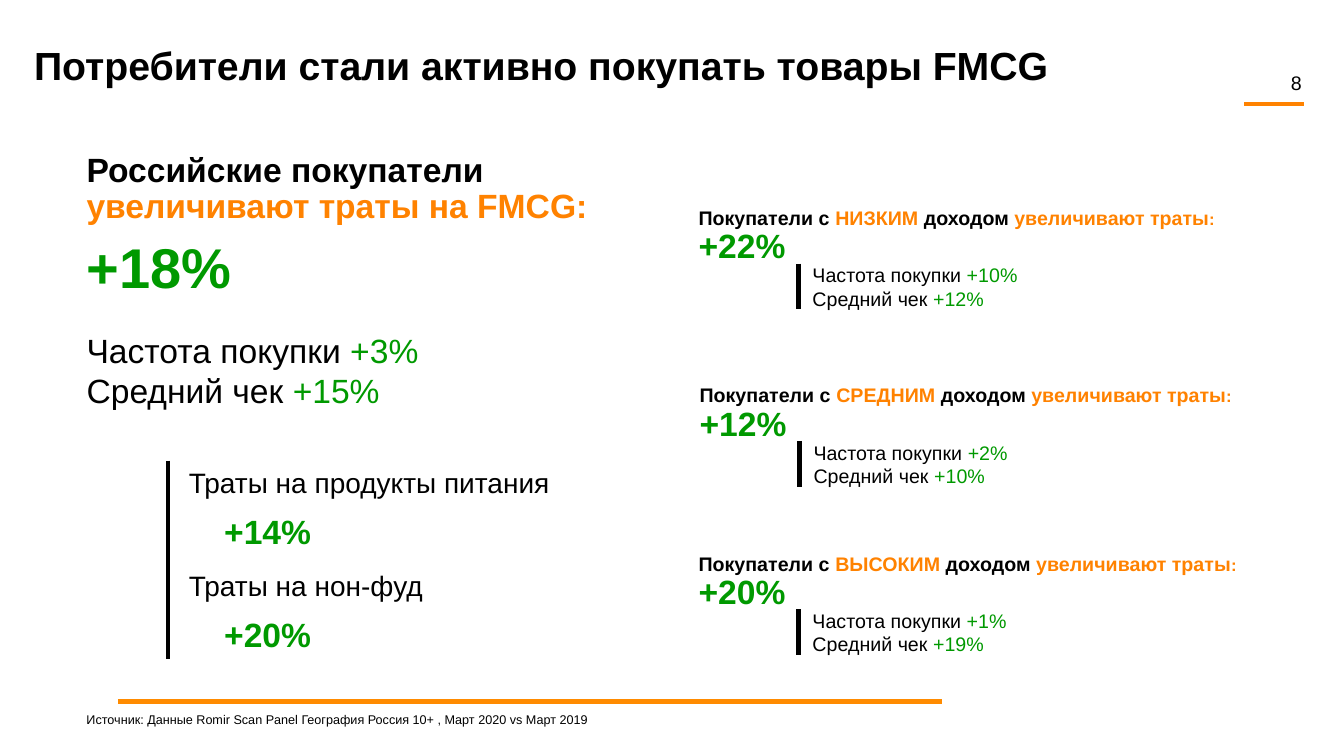
from dataclasses import dataclass

from lxml.etree import SubElement
from pptx import Presentation
from pptx.dml.color import RGBColor
from pptx.enum.shapes import MSO_CONNECTOR as Connector
from pptx.enum.text import MSO_ANCHOR as Anchor, PP_ALIGN as Align
from pptx.oxml.ns import qn
from pptx.util import Inches, Pt

WIDTH, HEIGHT = Inches(13.33), Inches(7.5)
COLUMN, ROW = WIDTH / 133.3, HEIGHT / 75


@dataclass(frozen=True)
class Theme:
    font: str = "Arial"
    black: str = "000000"
    orange: str = "FF8200"
    footer_orange: str = "FF8B00"
    green: str = "009900"
    line: float = 3
    title: float = 28
    hero: float = 40
    large: float = 24
    medium: float = 20
    small: float = 14
    colon: float = 12
    source: float = 9
    tight: float = 0.9
    gap: float = 10


THEME = Theme()


@dataclass(frozen=True)
class Box:
    left: float
    top: float
    width: float
    height: float

    def inset(self, left, top, width, height):
        return Box(self.left + left, self.top + top, width, height)


@dataclass(frozen=True)
class Words:
    text: str
    size: float
    color: str = THEME.black
    bold: bool = False


def add_text(slide, box, paragraphs, spacing=None, gap=0, indent=0,
             anchor=Anchor.TOP, align=Align.LEFT, side=1):
    shape = slide.shapes.add_textbox(
        round(box.left * COLUMN), round(box.top * ROW),
        round(box.width * COLUMN), round(box.height * ROW))
    frame = shape.text_frame
    frame.word_wrap = True
    frame.vertical_anchor = anchor
    frame.margin_left = frame.margin_right = round(side * COLUMN)
    frame.margin_top = frame.margin_bottom = round(ROW / 2)
    for index, pieces in enumerate(paragraphs):
        paragraph = frame.paragraphs[0] if index == 0 else frame.add_paragraph()
        paragraph.alignment = align
        if spacing:
            paragraph.line_spacing = spacing
        if index and gap:
            paragraph.space_before = Pt(gap)
        if indent:
            paragraph._p.get_or_add_pPr().set("marL", str(round(indent * COLUMN)))
        for piece in pieces:
            run = paragraph.add_run()
            run.text = piece.text
            run.font.name = THEME.font
            run.font.size = Pt(piece.size)
            run.font.bold = piece.bold
            run.font.color.rgb = RGBColor.from_string(piece.color)


def add_line(slide, box, color):
    line = slide.shapes.add_connector(
        Connector.STRAIGHT, round(box.left * COLUMN), round(box.top * ROW),
        round((box.left + box.width) * COLUMN), round((box.top + box.height) * ROW))
    line.line.color.rgb = RGBColor.from_string(color)
    line.line.width = Pt(THEME.line)
    SubElement(line._element.spPr, qn("a:effectLst"))


def metrics(size, frequency, check):
    return [[Words(label, size), Words(value, size, THEME.green)]
            for label, value in (("Частота покупки ", frequency),
                                 ("Средний чек ", check))]


def draw_header(slide, box, title, number):
    add_text(slide, box.inset(0, 0, 115.4, 8.5),
             [[Words(title, THEME.title, bold=True)]],
             spacing=THEME.tight, anchor=Anchor.MIDDLE)
    add_text(slide, box.inset(121.9, 4, 4.8, 2.9), [[Words(number, THEME.small)]],
             align=Align.RIGHT, side=0)
    add_line(slide, box.inset(121, 7.8, 5.9, 0), THEME.orange)


def draw_footer(slide, box, source):
    add_line(slide, box.inset(4.1, 0, 81.7, 0), THEME.footer_orange)
    add_text(slide, box.inset(0, 0.7, box.width, 2.9),
             [[Words(source, THEME.source)]], spacing=THEME.tight)


def draw_summary(slide, box):
    add_text(slide, box.inset(0, 0, 57.8, 18.6), [
        [Words("Российские покупатели ", THEME.large, bold=True),
         Words("увеличивают траты на FMCG:", THEME.large, THEME.orange, True)],
        [Words("+18%", THEME.hero, THEME.green, True)],
    ], spacing=THEME.tight, gap=THEME.gap)
    add_text(slide, box.inset(0, 17.5, 48.2, 11.6),
             metrics(THEME.large, "+3%", "+15%"))


def draw_spending(slide, box, categories):
    add_line(slide, box.inset(0, 0, 0, box.height), THEME.black)
    for index, (label, value) in enumerate(categories):
        top = index * 10.2
        add_text(slide, box.inset(0.25, top, 40, 8.3),
                 [[Words(label, THEME.medium)]], indent=0.8)
        add_text(slide, box.inset(4.55, top + 4.5, 12, 5),
                 [[Words(value, THEME.large, THEME.green, True)]])


def draw_income_group(slide, box, level, growth, frequency, check):
    add_text(slide, box, [
        [Words("Покупатели с ", THEME.small, bold=True),
         Words(level + " ", THEME.small, THEME.orange, True),
         Words("доходом ", THEME.small, bold=True),
         Words("увеличивают траты", THEME.small, THEME.orange, True),
         Words(":", THEME.colon, THEME.orange, True)],
        [Words(growth, THEME.large, THEME.green, True)],
    ], spacing=THEME.tight)
    add_text(slide, box.inset(11.3, 5.4, 44.8, 5.1),
             metrics(THEME.small, frequency, check))
    add_line(slide, box.inset(10.9, 5.95, 0, 4.55), THEME.black)


def main():
    presentation = Presentation()
    presentation.slide_width, presentation.slide_height = WIDTH, HEIGHT
    slide = presentation.slides.add_slide(presentation.slide_layouts[6])
    draw_header(slide, Box(2.4, 2.5, 126.9, 8.5),
                "Потребители стали активно покупать товары FMCG", "8")
    draw_summary(slide, Box(7.6, 14.7, 57.8, 29.1))
    draw_spending(slide, Box(16.7, 45.7, 40, 19.7),
                  [("Траты на продукты питания", "+14%"),
                   ("Траты на нон-фуд", "+20%")])
    for left, top, *group in (
        (68.3, 20.2, "НИЗКИМ", "+22%", "+10%", "+12%"),
        (68.4, 37.8, "СРЕДНИМ", "+12%", "+2%", "+10%"),
        (68.3, 54.5, "ВЫСОКИМ", "+20%", "+1%", "+19%"),
    ):
        draw_income_group(slide, Box(left, top, 60.1, 8.9), *group)
    draw_footer(slide, Box(7.6, 69.6, 115, 3.6),
                "Источник: Данные Romir Scan Panel География Россия 10+ , "
                "Март 2020 vs Март 2019")
    presentation.save("out.pptx")


if __name__ == "__main__":
    main()
